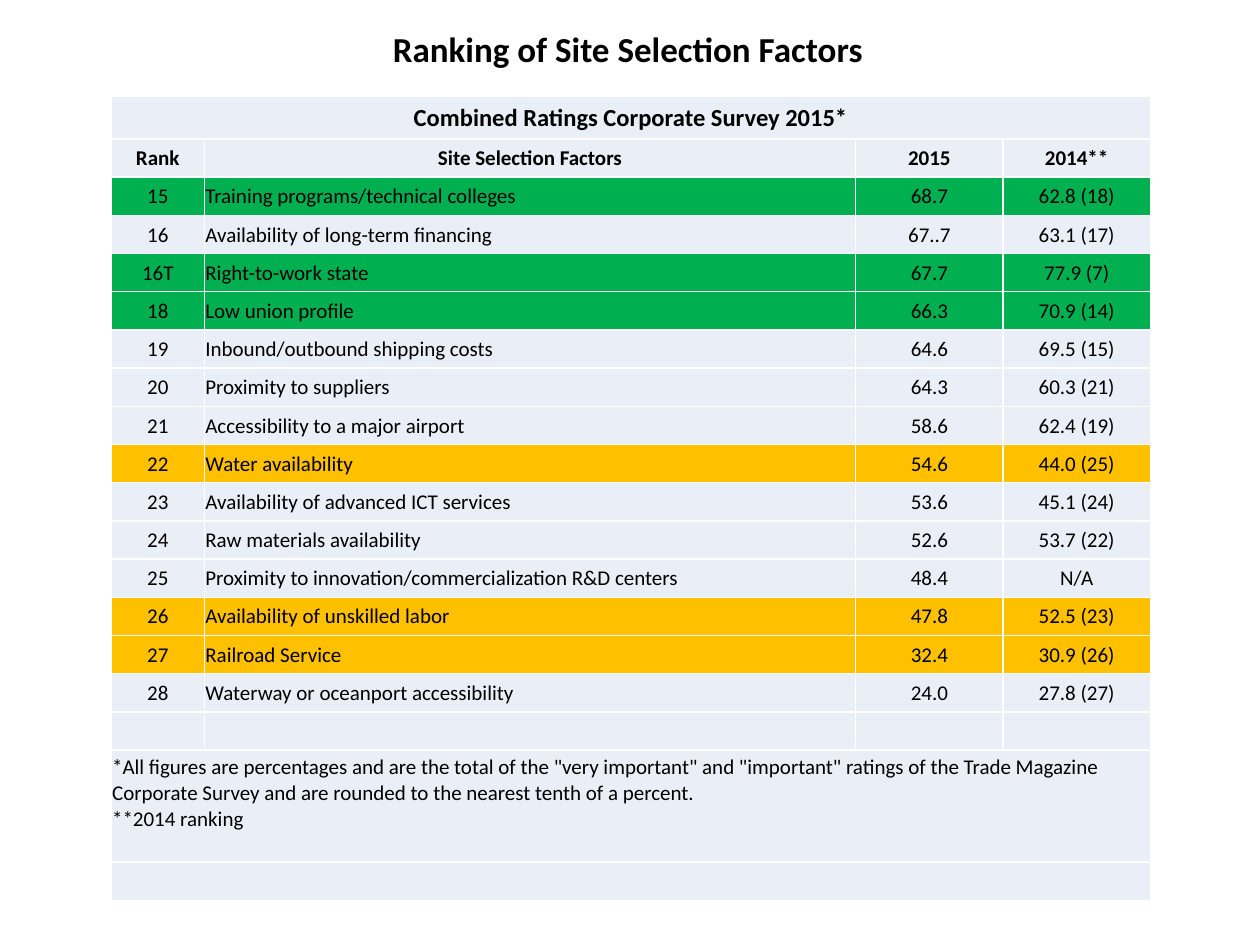
from lxml.etree import SubElement
from pptx import Presentation
from pptx.dml.color import RGBColor
from pptx.enum.text import MSO_ANCHOR, PP_ALIGN
from pptx.oxml.ns import qn
from pptx.util import Cm, Pt

COLORS = {
    "text": "000000",
    "border": "FFFFFF",
    "plain": "EAEFF7",
    "green": "00B050",
    "amber": "FFC000",
}
COL_WIDTHS = [1.88, 13.13, 2.97, 2.97]
ROW_HEIGHT, HEADING_HEIGHT, NOTE_HEIGHT = 0.77, 0.86, 2.26
HEADING = "Combined Ratings Corporate Survey 2015*"
HEADERS = ["Rank", "Site Selection Factors", "2015", "2014**"]
FACTORS = [
    ("green", "15", "Training programs/technical colleges", "68.7", "62.8 (18)"),
    ("plain", "16", "Availability of long-term financing", "67..7", "63.1 (17)"),
    ("green", "16T", "Right-to-work state", "67.7", "77.9 (7)"),
    ("green", "18", "Low union profile", "66.3", "70.9 (14)"),
    ("plain", "19", "Inbound/outbound shipping costs", "64.6", "69.5 (15)"),
    ("plain", "20", "Proximity to suppliers", "64.3", "60.3 (21)"),
    ("plain", "21", "Accessibility to a major airport", "58.6", "62.4 (19)"),
    ("amber", "22", "Water availability", "54.6", "44.0 (25)"),
    ("plain", "23", "Availability of advanced ICT services", "53.6", "45.1 (24)"),
    ("plain", "24", "Raw materials availability", "52.6", "53.7 (22)"),
    ("plain", "25", "Proximity to innovation/commercialization R&D centers", "48.4", "N/A"),
    ("amber", "26", "Availability of unskilled labor", "47.8", "52.5 (23)"),
    ("amber", "27", "Railroad Service", "32.4", "30.9 (26)"),
    ("plain", "28", "Waterway or oceanport accessibility", "24.0", "27.8 (27)"),
]
NOTES = [
    '*All figures are percentages and are the total of the "very important" and '
    '"important" ratings of the Trade Magazine Corporate Survey and are rounded '
    "to the nearest tenth of a percent.",
    "**2014 ranking",
]


def rgb(name):
    return RGBColor.from_string(COLORS[name])


def write(tf, *lines, size=12, bold=False, align=PP_ALIGN.LEFT):
    for i, line in enumerate(lines):
        p = tf.paragraphs[0] if i == 0 else tf.add_paragraph()
        p.alignment = align
        r = p.add_run()
        r.text = line
        r.font.name = "Calibri"
        r.font.size = Pt(size)
        r.font.bold = bold
        r.font.color.rgb = rgb("text")


def add_borders(cell):
    tc_pr = cell._tc.get_or_add_tcPr()
    for i, side in enumerate(("lnL", "lnR", "lnT", "lnB")):
        ln = tc_pr.makeelement(qn(f"a:{side}"), {"w": str(Pt(1))})
        fill = SubElement(ln, qn("a:solidFill"))
        SubElement(fill, qn("a:srgbClr"), val=COLORS["border"])
        tc_pr.insert(i, ln)


def style_cell(cell, fill="plain"):
    cell.margin_left = cell.margin_right = cell.margin_top = Cm(0.02)
    cell.margin_bottom = 0
    cell.vertical_anchor = MSO_ANCHOR.MIDDLE
    cell.fill.solid()
    cell.fill.fore_color.rgb = rgb(fill)
    add_borders(cell)
    if not cell.text_frame.text:
        SubElement(cell.text_frame.paragraphs[0]._p, qn("a:endParaRPr"), sz="1200")


def add_title(s):
    tf = s.shapes.add_textbox(Cm(7.67), Cm(0.43), Cm(10.06), Cm(1.11)).text_frame
    tf.word_wrap = False
    write(tf, "Ranking of Site Selection Factors", size=20, bold=True)


def add_ranking(s):
    first = 2
    blank_row = first + len(FACTORS)
    note_row = blank_row + 1
    last_row = note_row + 1
    heights = [ROW_HEIGHT] * (last_row + 1)
    heights[0], heights[note_row] = HEADING_HEIGHT, NOTE_HEIGHT
    table = s.shapes.add_table(
        len(heights), len(COL_WIDTHS),
        Cm(2.24), Cm(1.94), Cm(sum(COL_WIDTHS)), Cm(sum(heights)),
    ).table
    table.first_row = table.horz_banding = False
    for col, width in zip(table.columns, COL_WIDTHS):
        col.width = Cm(width)
    for row, height in zip(table.rows, heights):
        row.height = Cm(height)
    for i in (0, note_row, last_row):
        table.cell(i, 0).merge(table.cell(i, len(COL_WIDTHS) - 1))

    write(table.cell(0, 0).text_frame, HEADING, size=14, bold=True, align=PP_ALIGN.CENTER)
    for j, header in enumerate(HEADERS):
        write(table.cell(1, j).text_frame, header, bold=True, align=PP_ALIGN.CENTER)
    for i, (_, *values) in enumerate(FACTORS, first):
        for j, value in enumerate(values):
            align = PP_ALIGN.LEFT if j == 1 else PP_ALIGN.CENTER
            write(table.cell(i, j).text_frame, value, align=align)
    note = table.cell(note_row, 0)
    write(note.text_frame, *NOTES)

    fills = ["plain"] * first + [f[0] for f in FACTORS] + ["plain"] * 3
    for row, fill in zip(table.rows, fills):
        for cell in row.cells:
            style_cell(cell, fill)
    note.vertical_anchor = MSO_ANCHOR.TOP
    note.margin_top = Cm(0.1)


def main():
    prs = Presentation()
    prs.slide_width, prs.slide_height = Cm(25.4), Cm(19.05)
    s = prs.slides.add_slide(prs.slide_layouts[6])
    add_ranking(s)
    add_title(s)
    prs.save("out.pptx")


if __name__ == "__main__":
    main()
